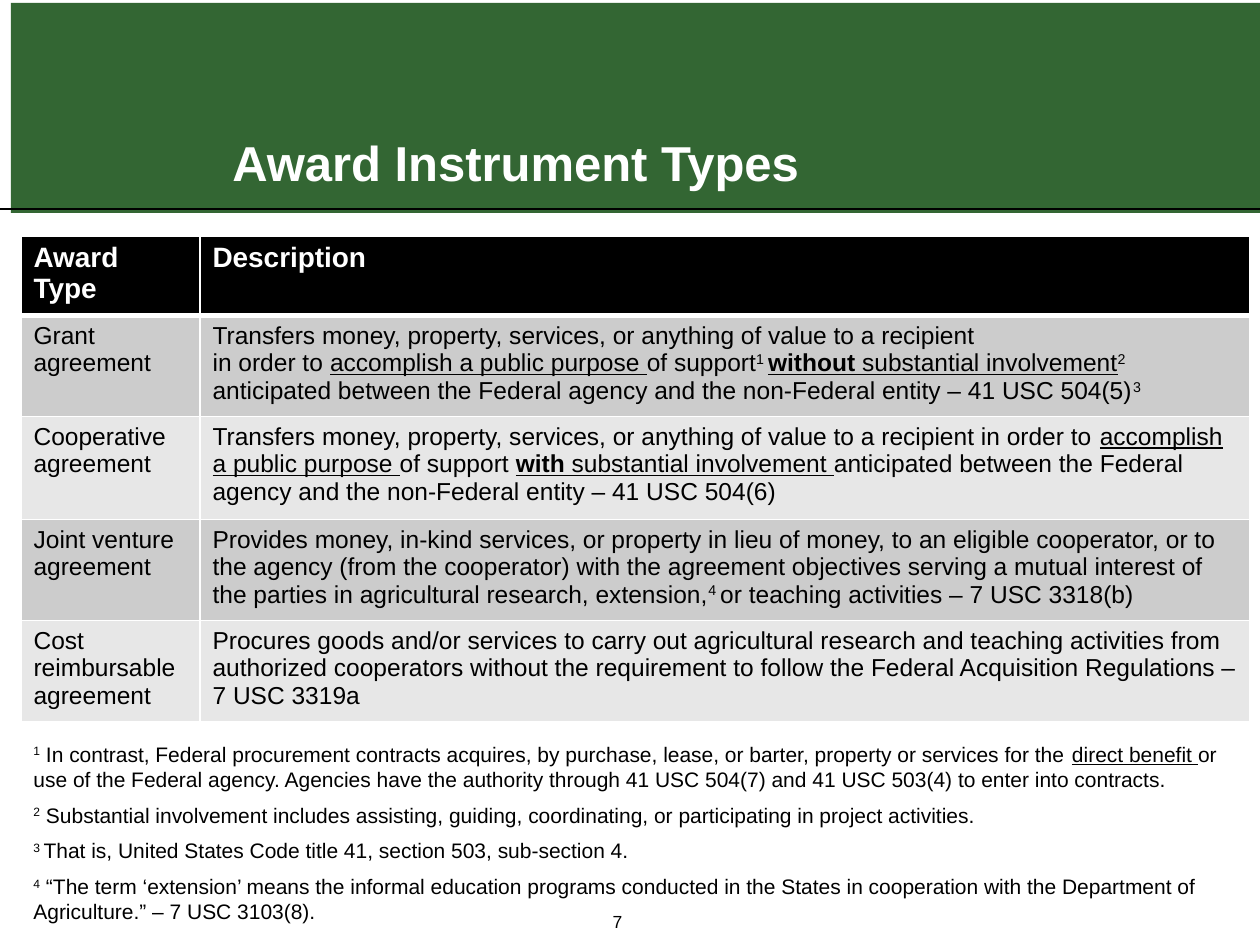
from dataclasses import dataclass
from lxml.etree import SubElement
from pptx import Presentation
from pptx.dml.color import RGBColor
from pptx.enum.shapes import MSO_CONNECTOR, MSO_SHAPE
from pptx.enum.text import MSO_ANCHOR, PP_ALIGN
from pptx.oxml.ns import qn
from pptx.util import Emu, Pt

SCALE = 914400 / 126


def px(n):
    return Emu(round(n * SCALE))


@dataclass(frozen=True)
class Theme:
    font: str = "Arial"
    green: str = "336633"
    black: str = "000000"
    white: str = "FFFFFF"
    bands: tuple = ("CCCCCC", "E7E7E7")
    title: int = 28
    head: int = 16
    body: int = 14
    note: int = 12
    page: int = 10


class Deck:
    def __init__(self, theme, wide, high):
        self.theme = theme
        self.file = Presentation()
        self.file.slide_width, self.file.slide_height = px(wide), px(high)
        self.slide = self.file.slides.add_slide(self.file.slide_layouts[6])
        self.shapes = self.slide.shapes

    def rect(self, x, y, w, h, color):
        box = self.shapes.add_shape(MSO_SHAPE.RECTANGLE, px(x), px(y), px(w), px(h))
        box.shadow.inherit = False
        box.fill.solid()
        box.fill.fore_color.rgb = RGBColor.from_string(color)
        box.line.fill.background()

    def line(self, x1, y1, x2, y2, color, width):
        rule = self.shapes.add_connector(
            MSO_CONNECTOR.STRAIGHT, px(x1), px(y1), px(x2), px(y2))
        rule.line.color.rgb = RGBColor.from_string(color)
        rule.line.width = Pt(width)
        SubElement(rule._element.spPr, qn("a:effectLst"))

    def put(self, frame, paras, size, color, bold=False, align=PP_ALIGN.LEFT, after=0):
        """Each paragraph is a list of (text, marks): b bold, u underline, s superscript."""
        for i, runs in enumerate(paras):
            para = frame.paragraphs[0] if i == 0 else frame.add_paragraph()
            para.alignment = align
            para.space_after = Pt(after)
            for text, marks in runs:
                run = para.add_run()
                run.text = text
                font = run.font
                font.name, font.size = self.theme.font, Pt(size)
                font.color.rgb = RGBColor.from_string(color)
                font.bold = bold or "b" in marks
                font.underline = "u" in marks
                if "s" in marks:
                    run._r.get_or_add_rPr().set("baseline", "30000")

    def text(self, x, y, w, h, paras, size, color, anchor=MSO_ANCHOR.TOP, **style):
        frame = self.shapes.add_textbox(px(x), px(y), px(w), px(h)).text_frame
        frame.word_wrap = True
        frame.vertical_anchor = anchor
        self.put(frame, paras, size, color, **style)

    def border(self, cell, widths):
        props = cell._tc.get_or_add_tcPr()
        for side, width in zip("LRTB", widths):
            edge = SubElement(props, qn(f"a:ln{side}"), w=str(Pt(width)))
            fill = SubElement(edge, qn("a:solidFill"))
            SubElement(fill, qn("a:srgbClr"), val=self.theme.white)

    def table(self, x, y, cols, rows, data):
        look = self.theme
        grid = self.shapes.add_table(
            len(rows), len(cols), px(x), px(y), px(sum(cols)), px(sum(rows))).table
        grid.first_row = grid.horz_banding = False
        for col, wide in zip(grid.columns, cols):
            col.width = px(wide)
        for r, (high, line) in enumerate(zip(rows, data)):
            grid.rows[r].height = px(high)
            head = r == 0
            for c, paras in enumerate(line):
                cell = grid.cell(r, c)
                self.border(cell, (1, 1, 3 if r == 1 else 1, 3 if head else 1))
                cell.fill.solid()
                cell.fill.fore_color.rgb = RGBColor.from_string(
                    look.black if head else look.bands[(r - 1) % 2])
                self.put(cell.text_frame, paras, look.head if head else look.body,
                         look.white if head else look.black, bold=head)

    def save(self):
        self.file.save("out.pptx")


def plain(text):
    return [[(text, "")]]


AWARDS = [
    (plain("Award Type"), plain("Description")),
    (plain("Grant agreement"), [
        [("Transfers money, property, services, or anything of value to a recipient", "")],
        [("in order to ", ""), ("accomplish a public purpose ", "u"), ("of support", ""),
         ("1 ", "s"), ("without", "bu"), (" substantial involvement", "u"), ("2", "s"),
         (" anticipated between the Federal agency and the non-Federal entity"
          " – 41 USC 504(5)", ""), ("3", "s")]]),
    (plain("Cooperative agreement"), [
        [("Transfers money, property, services, or anything of value to a recipient"
          " in order to ", ""), ("accomplish a public purpose ", "u"), ("of support ", ""),
         ("with", "bu"), (" substantial involvement ", "u"),
         ("anticipated between the Federal agency and the non-Federal entity"
          " – 41 USC 504(6)", "")]]),
    (plain("Joint venture agreement"), [
        [("Provides money, in-kind services, or property in lieu of money, to an eligible"
          " cooperator, or to the agency (from the cooperator) with the agreement objectives"
          " serving a mutual interest of the parties in agricultural research, extension,", ""),
         ("4 ", "s"), ("or teaching activities – 7 USC 3318(b)", "")]]),
    (plain("Cost reimbursable agreement"), plain(
        "Procures goods and/or services to carry out agricultural research and teaching"
        " activities from authorized cooperators without the requirement to follow the"
        " Federal Acquisition Regulations – 7 USC 3319a")),
]

NOTES = [
    [("1", "s"), (" In contrast, Federal procurement contracts acquires, by purchase, lease,"
                  " or barter, property or services for the ", ""), ("direct benefit ", "u"),
     ("or use of the Federal agency. Agencies have the authority through 41 USC 504(7)"
      " and 41 USC 503(4) to enter into contracts.", "")],
    [("2", "s"), (" Substantial involvement includes assisting, guiding, coordinating,"
                  " or participating in project activities.", "")],
    [("3 ", "s"), ("That is, United States Code title 41, section 503, sub-section 4.", "")],
    [("4", "s"), (" “The term ‘extension’ means the informal education programs conducted in"
                  " the States in cooperation with the Department of Agriculture.”"
                  " – 7 USC 3103(8).", "")],
]


def main():
    look = Theme()
    deck = Deck(look, 1260, 945)

    # Title band
    deck.rect(11, 3, 1260, 210, look.green)
    deck.line(0, 209, 1260, 209, look.black, 0.75)
    deck.text(220, 45, 823, 153, plain("Award Instrument Types"), look.title, look.white,
              anchor=MSO_ANCHOR.BOTTOM, bold=True)

    # Award table
    deck.table(21, 236, (179, 1050), (74, 95, 103, 95, 95), AWARDS)

    # Footnotes and page number
    deck.text(21, 735, 1218, 199, NOTES, look.note, look.black, after=6)
    deck.text(501, 917, 233, 21, plain("7"), look.page, look.black,
              anchor=MSO_ANCHOR.BOTTOM, align=PP_ALIGN.CENTER)
    deck.save()


if __name__ == "__main__":
    main()
